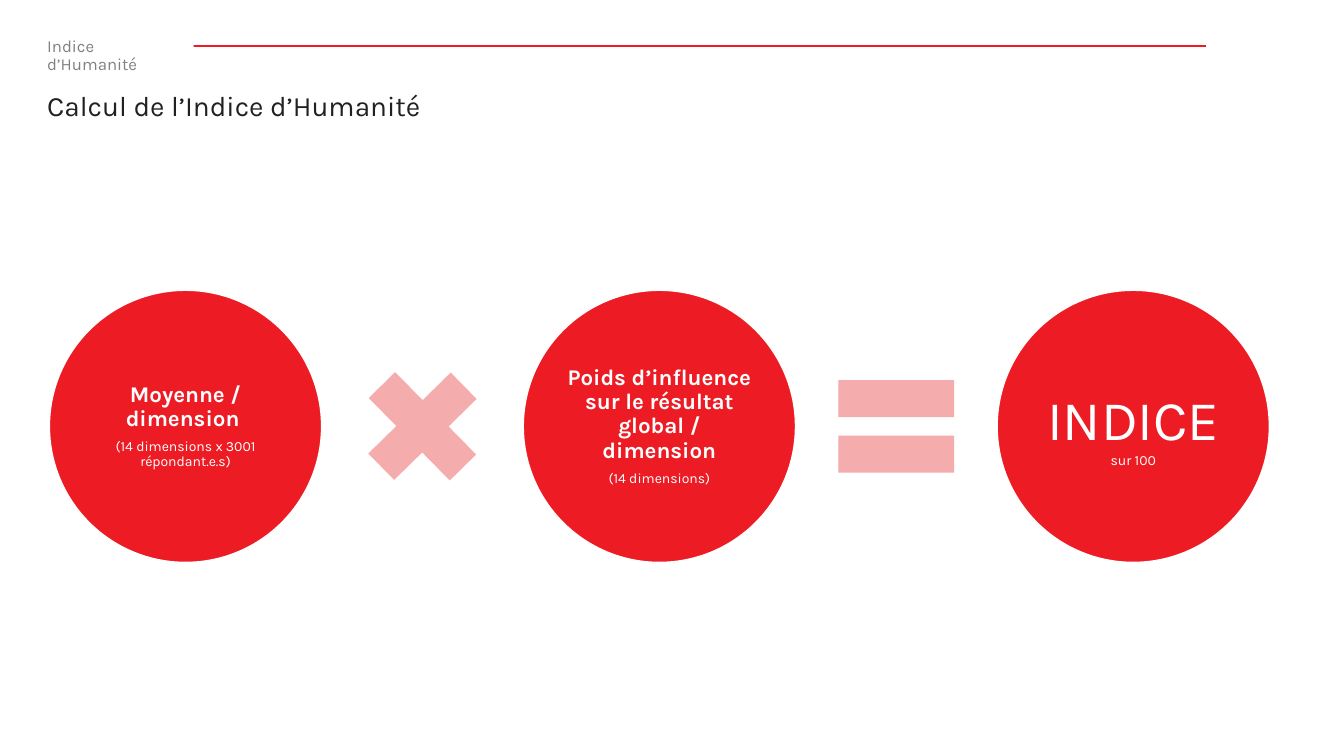
from pptx import Presentation
from pptx.dml.color import RGBColor
from pptx.enum import shapes, text
from pptx.oxml import parse_xml
from pptx.oxml.ns import nsdecls
from pptx.util import Inches, Pt

COLORS = {"red": "ED1C24", "pink": "F4ACAC", "white": "FFFFFF",
          "grey": "808080", "dark": "212121"}
FONT = "Karla"
DIAMETER, PITCH, OPERATOR_SIZE = 2.7, 4.7, 1.56

HEADLINE = {"size": 16, "bold": True, "line_spacing": 0.9, "space_after": Pt(6)}
DETAIL = {"size": 10, "line_spacing": 0.9}
TERMS = [
    (0.02, [("Moyenne / dimension ", HEADLINE),
            ("(14 dimensions x 3001 répondant.e.s)", DETAIL)]),
    (0.02, [("Poids d’influence sur le résultat global / dimension", HEADLINE),
            ("(14 dimensions)", DETAIL)]),
    (0.06, [("INDICE", {"size": 40}), ("sur 100", {"size": 10})]),
]
OPERATORS = [(shapes.MSO_SHAPE.MATH_PLUS, 45.5), (shapes.MSO_SHAPE.MATH_EQUAL, 0)]


def rgb(name):
    return RGBColor.from_string(COLORS[name])


def add_filled(s, kind, box, fill, line=None):
    sp = s.shapes.add_shape(kind, *map(Inches, box))
    sp.shadow.inherit = False
    sp.fill.solid()
    sp.fill.fore_color.rgb = rgb(fill)
    if line:
        sp.line.color.rgb = rgb(line)
        sp.line.width = Pt(1)
    else:
        sp.line.fill.background()
    return sp


def write(p, words, color, size, bold=False, **layout):
    for name, value in layout.items():
        setattr(p, name, value)
    r = p.add_run()
    r.text = words
    for name, value in {"name": FONT, "size": Pt(size), "bold": bold}.items():
        setattr(r.font, name, value)
    r.font.color.rgb = rgb(color)


def add_header(s, left, top, width):
    """Red rule, section label masking its start, and the heading below."""
    y = Inches(top + 0.13)
    rule = s.shapes.add_connector(shapes.MSO_CONNECTOR.STRAIGHT, Inches(left + 0.53), y,
                                  Inches(left + width), y)
    rule.line.color.rgb = rgb("red")
    rule.line.width = Pt(1.5)
    rule._element.spPr.append(parse_xml(f"<a:effectLst {nsdecls('a')}/>"))

    heading = s.shapes.add_textbox(*map(Inches, (left, top + 0.56, width, 0.39)))
    label = add_filled(s, shapes.MSO_SHAPE.RECTANGLE, (left, top, 1.55, 0.28), "white")
    for sp, words, color, size, layout in [
        (heading, "Calcul de l’Indice d’Humanité", "dark", 20,
         {"line_spacing": 0.8, "space_before": Pt(10)}),
        (label, "Indice d’Humanité", "grey", 12, {"line_spacing": 0.9}),
    ]:
        tf = sp.text_frame
        tf.word_wrap = True
        tf.vertical_anchor = text.MSO_ANCHOR.TOP
        write(tf.paragraphs[0], words, color, size, alignment=text.PP_ALIGN.LEFT, **layout)


def add_term(s, left, top, inset, lines):
    sp = add_filled(s, shapes.MSO_SHAPE.OVAL, (left, top, DIAMETER, DIAMETER), "red", "white")
    tf = sp.text_frame
    tf.word_wrap = True
    tf.vertical_anchor = text.MSO_ANCHOR.MIDDLE
    for side in ("left", "top", "right", "bottom"):
        setattr(tf, f"margin_{side}", Inches(inset))
    for i, (words, style) in enumerate(lines):
        p = tf.add_paragraph() if i else tf.paragraphs[0]
        write(p, words, "white", alignment=text.PP_ALIGN.CENTER, **style)


def add_equation(s, left, top):
    """Circles at an equal pitch, with an operator centred between neighbours."""
    for i, (inset, lines) in enumerate(TERMS):
        add_term(s, left + i * PITCH, top, inset, lines)
    for i, (kind, angle) in enumerate(OPERATORS):
        x = left + (i + 0.5) * PITCH + (DIAMETER - OPERATOR_SIZE) / 2
        y = top + (DIAMETER - OPERATOR_SIZE) / 2
        sp = add_filled(s, kind, (x, y, OPERATOR_SIZE, OPERATOR_SIZE), "pink")
        sp.rotation = angle


def main():
    prs = Presentation()
    prs.slide_width, prs.slide_height = Inches(13.33), Inches(7.5)
    s = prs.slides.add_slide(prs.slide_layouts[6])
    add_header(s, 0.37, 0.33, 11.59)
    add_equation(s, 0.49, 2.88)
    prs.save("out.pptx")


if __name__ == "__main__":
    main()
